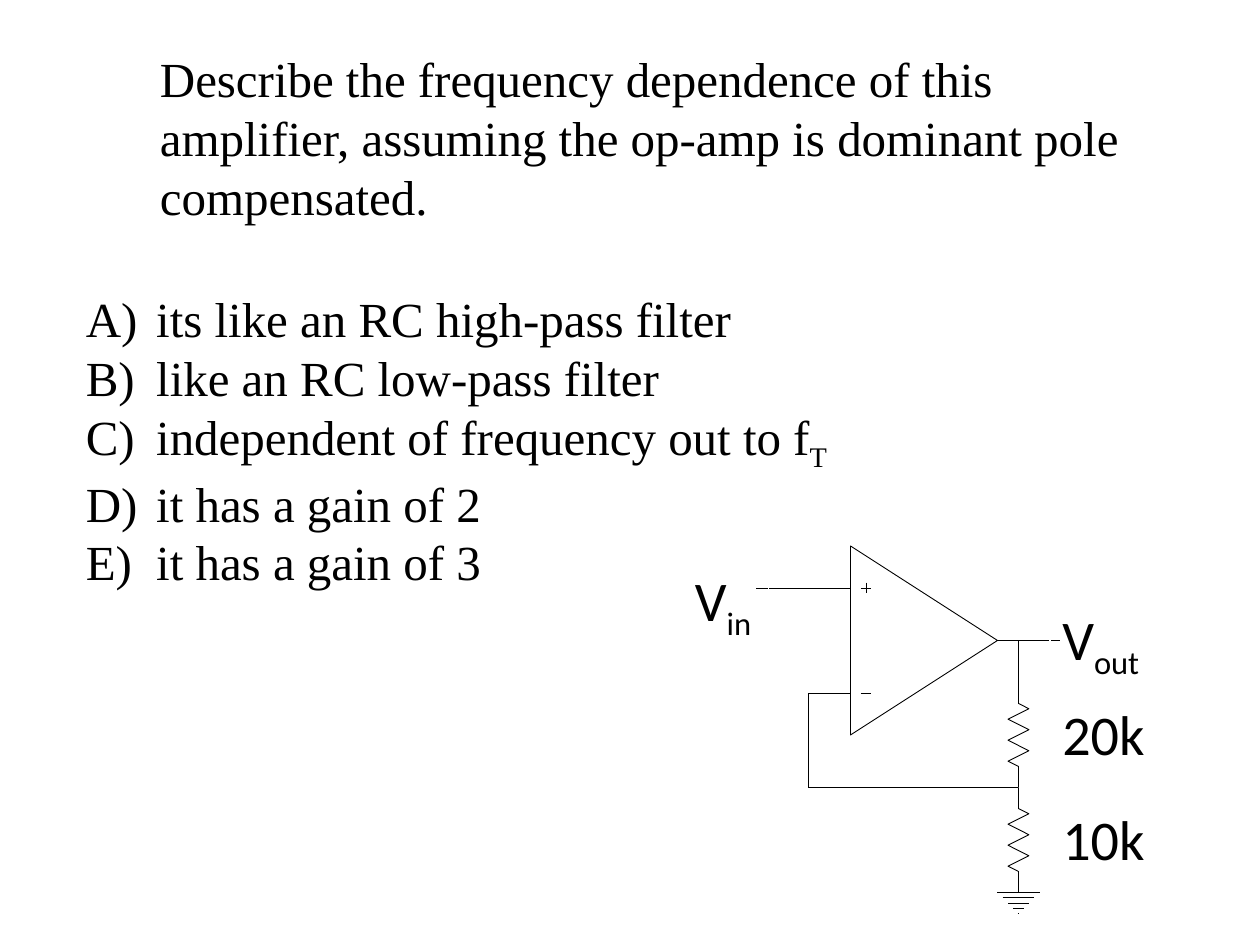
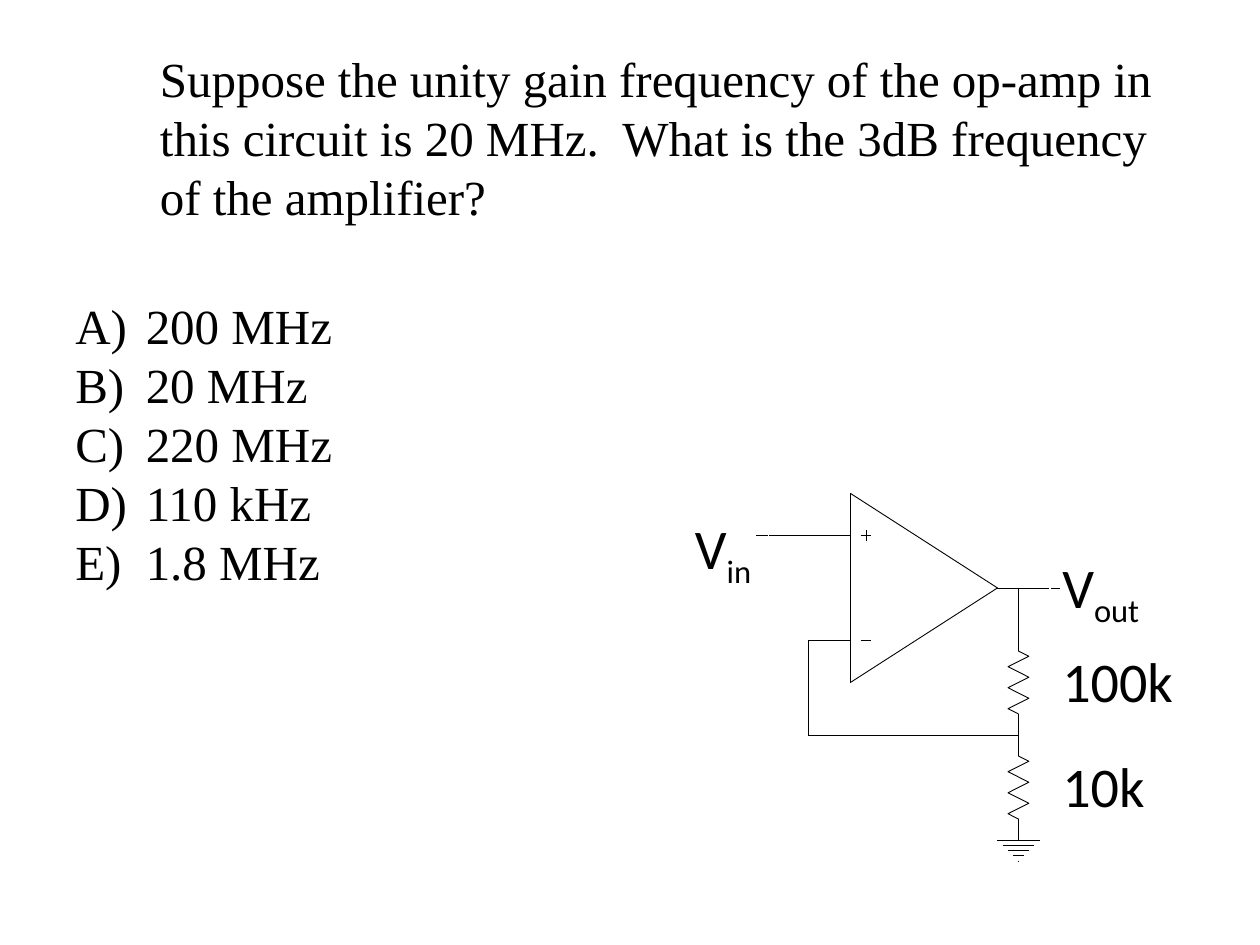
"""Build two op-amp quiz slides, each with a question, answers and a circuit."""
import dataclasses

import pptx
import pptx.dml.color
import pptx.enum.shapes
import pptx.enum.text
import pptx.oxml.ns
import pptx.util
from lxml import etree

Cm = pptx.util.Cm
Pt = pptx.util.Pt

QUIZZES = [
    dict(
        question="Describe the frequency dependence of this amplifier, "
                 "assuming the op-amp is dominant pole compensated.",
        answers=["its like an RC high-pass filter", "like an RC low-pass filter",
                 "independent of frequency out to f_T", "it has a gain of 2",
                 "it has a gain of 3"],
        answers_at=(1.48, 5.69), resistors=("20k", "10k"), amp_row=122),
    dict(
        question="Suppose the unity gain frequency of the op-amp in this circuit "
                 "is 20 MHz.  What is the 3dB frequency of the amplifier?",
        answers=["200 MHz", "20 MHz", "220 MHz", "110 kHz", "1.8 MHz"],
        answers_at=(1.27, 5.84), resistors=("100k", "10k"), amp_row=112),
]

INPUT_X, FEEDBACK_X, AMP_X, TIP_X, DIVIDER_X, OUTPUT_X = 144, 154, 162, 190, 194, 202
LABEL_X = 200
AMP_HALF, INPUT_OFFSET, TAP_Y, RESISTOR_H = 18, 10, 28, 20
ZIGZAG = [(0, 0), (0, 4), (2, 5), (-2, 7), (2, 9), (-2, 11),
          (2, 13), (-2, 15), (0, 16), (0, RESISTOR_H)]
GROUND_HALF_WIDTHS = (4, 3, 2, 1, 0.1)


@dataclasses.dataclass(frozen=True)
class Theme:
    """Colours, fonts and sizes shared by the slides."""
    ink = pptx.dml.color.RGBColor(0, 0, 0)
    paper = pptx.dml.color.RGBColor(255, 255, 255)
    body_font: str = "Times New Roman"
    label_font: str = "Calibri"
    body_size: int = 28
    label_size: int = 32
    thin: float = 0.5
    wire: float = 0.75


THEME = Theme()


def grid(n):
    """Convert circuit grid steps (24 to the inch) to a length."""
    return Cm(2.54 * n / 24)


def write(p, text, font=THEME.body_font, size=THEME.body_size, color=THEME.ink):
    """Write text in a paragraph; what follows an underscore is a subscript."""
    p.alignment = pptx.enum.text.PP_ALIGN.LEFT
    for i, part in enumerate(text.split("_")):
        r = p.add_run()
        r.text = part
        r.font.name, r.font.size = font, Pt(size)
        r.font.color.rgb = color
        if i:
            r.font._element.set("baseline", "-25000")


def number(p, indent=Cm(1.42)):
    """Give a paragraph a hanging A) B) C) number."""
    pPr = p._p.get_or_add_pPr()
    pPr.set("marL", str(indent))
    pPr.set("indent", str(-indent))
    etree.SubElement(pPr, pptx.oxml.ns.qn("a:buFontTx"))
    etree.SubElement(pPr, pptx.oxml.ns.qn("a:buAutoNum"), type="alphaUcParenR")


def add_question(s, text):
    """Place the question in the title placeholder."""
    sp = s.shapes.title
    sp.left, sp.top, sp.width, sp.height = Cm(2.97), Cm(0.85), Cm(20.96), Cm(3.84)
    tf = sp.text_frame
    tf.word_wrap = True
    tf.auto_size = pptx.enum.text.MSO_AUTO_SIZE.NONE
    tf.vertical_anchor = pptx.enum.text.MSO_ANCHOR.TOP
    write(tf.paragraphs[0], text)


def add_answers(s, answers, left, top):
    """Place the lettered answers."""
    tf = s.shapes.add_textbox(Cm(left), Cm(top), Cm(22.86), Cm(6.3)).text_frame
    tf.word_wrap = True
    for i, answer in enumerate(answers):
        p = tf.add_paragraph() if i else tf.paragraphs[0]
        write(p, answer)
        number(p)


def add_wire(s, x1, y1, x2, y2, width=THEME.thin):
    """Draw a straight wire between two grid points."""
    sp = s.shapes.add_connector(pptx.enum.shapes.MSO_CONNECTOR.STRAIGHT,
                                grid(x1), grid(y1), grid(x2), grid(y2))
    sp.line.color.rgb = THEME.ink
    sp.line.width = Pt(width)
    etree.SubElement(sp._element.spPr, pptx.oxml.ns.qn("a:effectLst"))


def add_outline(s, points, close=False):
    """Draw an unfilled outline through grid points."""
    start, *rest = [(grid(x), grid(y)) for x, y in points]
    builder = s.shapes.build_freeform(*start)
    builder.add_line_segments(rest, close=close)
    sp = builder.convert_to_shape()
    sp.shadow.inherit = False
    sp.fill.background()
    sp.line.color.rgb = THEME.ink
    sp.line.width = Pt(THEME.thin)


def add_label(s, text, x, y, width, framed=False):
    """Place a circuit label, optionally in a paper-coloured frame."""
    box = grid(x), grid(y), Cm(width), Cm(1.63)
    if framed:
        sp = s.shapes.add_shape(pptx.enum.shapes.MSO_SHAPE.RECTANGLE, *box)
        sp.shadow.inherit = False
        sp.fill.background()
        sp.line.color.rgb = THEME.paper
        sp.line.width = Pt(THEME.wire)
    else:
        sp = s.shapes.add_textbox(*box)
    tf = sp.text_frame
    tf.word_wrap = False
    tf.vertical_anchor = pptx.enum.text.MSO_ANCHOR.TOP
    write(tf.paragraphs[0], text, font=THEME.label_font, size=THEME.label_size)


def add_circuit(s, resistors, mid):
    """Draw the amplifier and its feedback divider around grid row mid."""
    plus, minus, tap = mid - INPUT_OFFSET, mid + INPUT_OFFSET, mid + TAP_Y
    add_wire(s, INPUT_X, plus, AMP_X, plus)
    add_wire(s, FEEDBACK_X, minus, AMP_X, minus)
    add_wire(s, TIP_X, mid, OUTPUT_X, mid)
    add_outline(s, [(TIP_X, mid), (AMP_X, mid + AMP_HALF), (AMP_X, mid - AMP_HALF)],
                close=True)
    add_wire(s, FEEDBACK_X, tap, DIVIDER_X, tap)
    for row in (plus, minus):
        add_wire(s, AMP_X + 2, row, AMP_X + 4, row)
    add_wire(s, AMP_X + 3, plus - 1, AMP_X + 3, plus + 1)
    add_label(s, "V_in", 130, mid - 15.4, 1.73, framed=True)
    add_label(s, "V_out", LABEL_X, mid - 8, 2.16, framed=True)
    add_wire(s, DIVIDER_X, mid, DIVIDER_X, mid + 11.7, THEME.wire)
    add_wire(s, FEEDBACK_X, minus, FEEDBACK_X, tap, THEME.wire)
    for i, value in enumerate(resistors):
        top = tap + (i - 1) * RESISTOR_H
        add_outline(s, [(DIVIDER_X + dx, top + dy) for dx, dy in ZIGZAG])
        add_label(s, value, LABEL_X, top + 2, 0.71 + 0.5 * len(value) + 0.0
                  if len(value) < 3 else 2.18 + 0.59 * (len(value) - 3))
    for i, half in enumerate(GROUND_HALF_WIDTHS):
        row = tap + RESISTOR_H + i
        add_wire(s, DIVIDER_X - half, row, DIVIDER_X + half, row)


def main():
    """Build and save the slides."""
    prs = pptx.Presentation()
    prs.slide_width, prs.slide_height = Cm(25.4), Cm(19.05)
    for quiz in QUIZZES:
        s = prs.slides.add_slide(prs.slide_layouts[5])
        add_question(s, quiz["question"])
        add_answers(s, quiz["answers"], *quiz["answers_at"])
        add_circuit(s, quiz["resistors"], quiz["amp_row"])
    prs.save("out.pptx")


if __name__ == "__main__":
    main()
